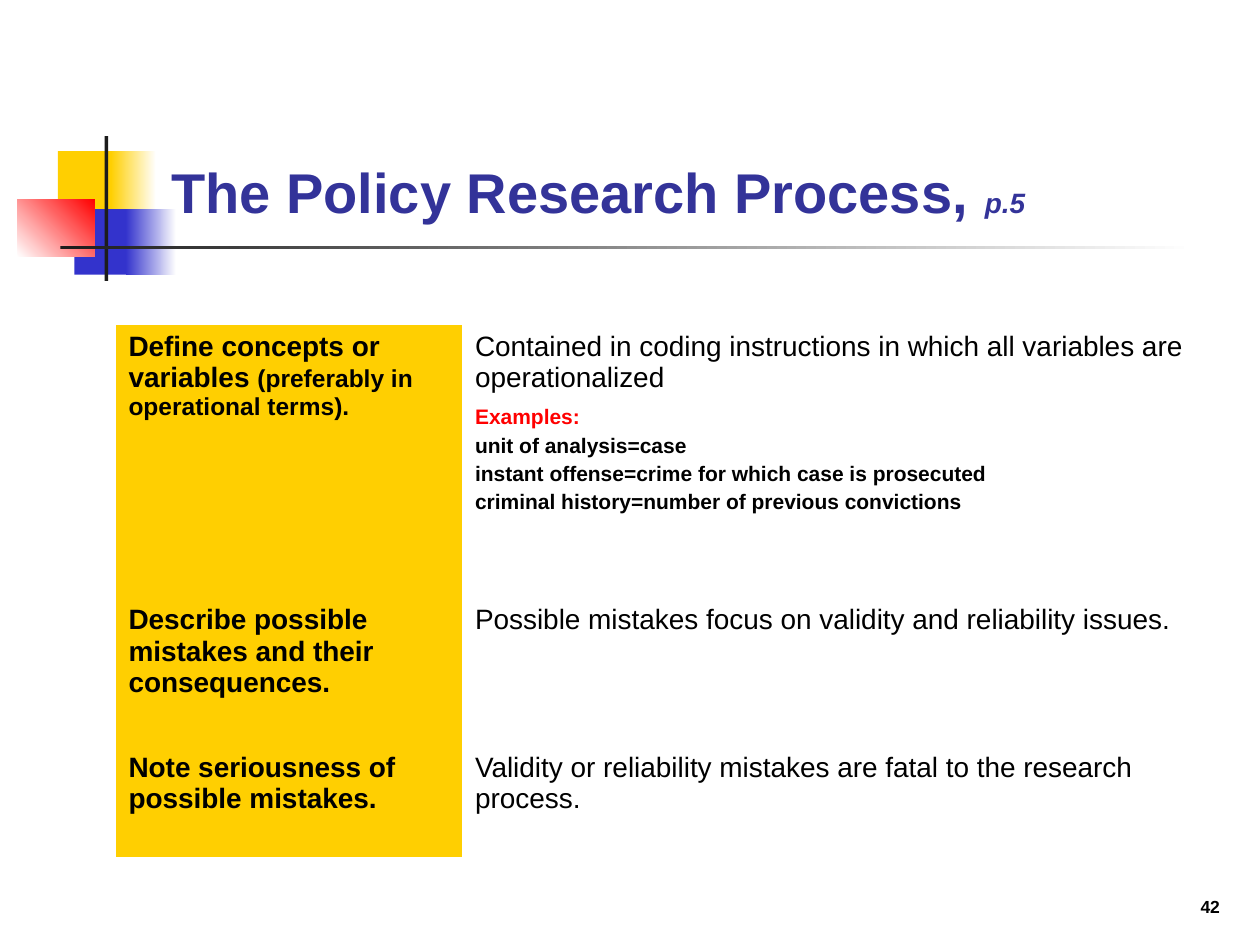
from lxml.etree import SubElement
from pptx import Presentation
from pptx.dml.color import RGBColor
from pptx.enum.shapes import MSO_SHAPE as Shape
from pptx.enum.text import MSO_ANCHOR as Anchor, MSO_AUTO_SIZE as AutoSize, PP_ALIGN as Align
from pptx.oxml.ns import qn
from pptx.util import Inches, Pt

YELLOW = RGBColor(0xFF, 0xCF, 0x01)
BLUE = RGBColor(0x33, 0x33, 0xCC)
NAVY = RGBColor(0x33, 0x33, 0x99)
RED = RGBColor(0xFF, 0x00, 0x00)
CHARCOAL = RGBColor(0x1C, 0x1C, 0x1C)
BLACK = RGBColor(0x00, 0x00, 0x00)
WHITE = RGBColor(0xFF, 0xFF, 0xFF)

NO_STYLE_NO_GRID = "{2D5ABB26-0587-4C30-8999-92F81FD0307C}"


class SlideBuilder:
    font_name = "Arial"

    def __init__(self, slide):
        self.slide = slide
        self.shapes = slide.shapes

    def add_run(self, paragraph, text, size, color=BLACK, bold=True, italic=False):
        run = paragraph.add_run()
        run.text = text
        font = run.font
        font.name, font.size, font.color.rgb = self.font_name, Pt(size), color
        font.bold, font.italic = bold, italic

    def block(self, left, top, width, height, color, end_color=None, angle=0):
        block = self.shapes.add_shape(
            Shape.RECTANGLE, Inches(left), Inches(top), Inches(width), Inches(height))
        block.shadow.inherit = False
        block.line.fill.background()
        if end_color is None:
            block.fill.solid()
            block.fill.fore_color.rgb = color
            return
        block.fill.gradient()
        block.fill.gradient_angle = angle
        for stop, stop_color, position in zip(
                block.fill.gradient_stops, (color, end_color), (0, 1)):
            stop.color.rgb = stop_color
            stop.position = position

    def title(self, left, top, width, height, runs):
        title = self.shapes.title
        title.left, title.top = Inches(left), Inches(top)
        title.width, title.height = Inches(width), Inches(height)
        frame = title.text_frame
        frame.word_wrap = True
        frame.auto_size = AutoSize.NONE
        frame.vertical_anchor = Anchor.BOTTOM
        heading = frame.paragraphs[0]
        heading.alignment = Align.LEFT
        for run in runs:
            self.add_run(heading, **run)
        title.element.getparent().append(title.element)

    def page_number(self, left, top, width, height, text):
        frame = self.shapes.add_textbox(
            Inches(left), Inches(top), Inches(width), Inches(height)).text_frame
        frame.word_wrap = True
        frame.vertical_anchor = Anchor.BOTTOM
        number = frame.paragraphs[0]
        number.alignment = Align.RIGHT
        self.add_run(number, text, 10)

    def fill_cell(self, cell, paragraphs, color=None):
        if color is None:
            cell.fill.background()
        else:
            cell.fill.solid()
            cell.fill.fore_color.rgb = color
        frame = cell.text_frame
        for index, runs in enumerate(paragraphs):
            paragraph = frame.add_paragraph() if index else frame.paragraphs[0]
            properties = paragraph._p.get_or_add_pPr()
            spacing = SubElement(properties, qn("a:spcBef"))
            SubElement(spacing, qn("a:spcPct")).set("val", "20000")
            for run in runs:
                self.add_run(paragraph, **run)

    def table(self, left, top, column_widths, row_heights, rows):
        frame = self.shapes.add_table(
            len(row_heights), len(column_widths), Inches(left), Inches(top),
            Inches(sum(column_widths)), Inches(sum(row_heights)))
        table = frame.table
        table.first_row = table.horz_banding = False
        table._tbl.tblPr.find(qn("a:tableStyleId")).text = NO_STYLE_NO_GRID
        for column, width in zip(table.columns, column_widths):
            column.width = Inches(width)
        for row, height, (step, explanation) in zip(table.rows, row_heights, rows):
            row.height = Inches(height)
            self.fill_cell(row.cells[0], step, YELLOW)
            self.fill_cell(row.cells[1], explanation)


def strong(text, size=16, color=BLACK):
    return dict(text=text, size=size, color=color)


def plain(text):
    return dict(text=text, size=16, bold=False)


def main():
    presentation = Presentation()
    presentation.slide_width, presentation.slide_height = Inches(10), Inches(7.5)
    builder = SlideBuilder(presentation.slides.add_slide(presentation.slide_layouts[5]))

    builder.block(0.46, 1.2, 0.48, 0.52, YELLOW)
    builder.block(0.88, 1.2, 0.36, 0.52, YELLOW, WHITE)
    builder.block(0.59, 1.66, 0.46, 0.52, BLUE)
    builder.block(1, 1.66, 0.4, 0.52, BLUE, WHITE)
    builder.block(0.14, 1.58, 0.61, 0.46, WHITE, RED, angle=45)
    builder.block(0.83, 1.08, 0.03, 1.15, CHARCOAL)
    builder.block(0.48, 1.95, 9, 0.03, CHARCOAL, WHITE)

    builder.page_number(7.7, 6.83, 2.08, 0.5, "42")
    builder.title(1.26, 0.23, 8.52, 1.6, [
        strong("The Policy Research Process, ", 32, NAVY),
        dict(text="p.5", size=16, color=NAVY, italic=True),
    ])

    examples = [
        "unit of analysis=case",
        "instant offense=crime for which case is prosecuted",
        "criminal history=number of previous convictions",
    ]
    builder.table(0.92, 2.58, [2.75, 6.08], [2.17, 1.17, 0.88], [
        ([[strong("Define concepts or variables "),
           strong("(preferably in operational terms).", 14)]],
         [[plain("Contained in coding instructions in which all variables are operationalized")],
          [strong("Examples:", 12, RED), plain(" ")],
          *[[strong(example, 12)] for example in examples]]),
        ([[strong("Describe possible mistakes and their consequences.")]],
         [[plain("Possible mistakes focus on validity and reliability issues.")]]),
        ([[strong("Note seriousness of possible mistakes.")]],
         [[plain("Validity or reliability mistakes are fatal to the research process.")]]),
    ])

    presentation.save("out.pptx")


if __name__ == "__main__":
    main()
